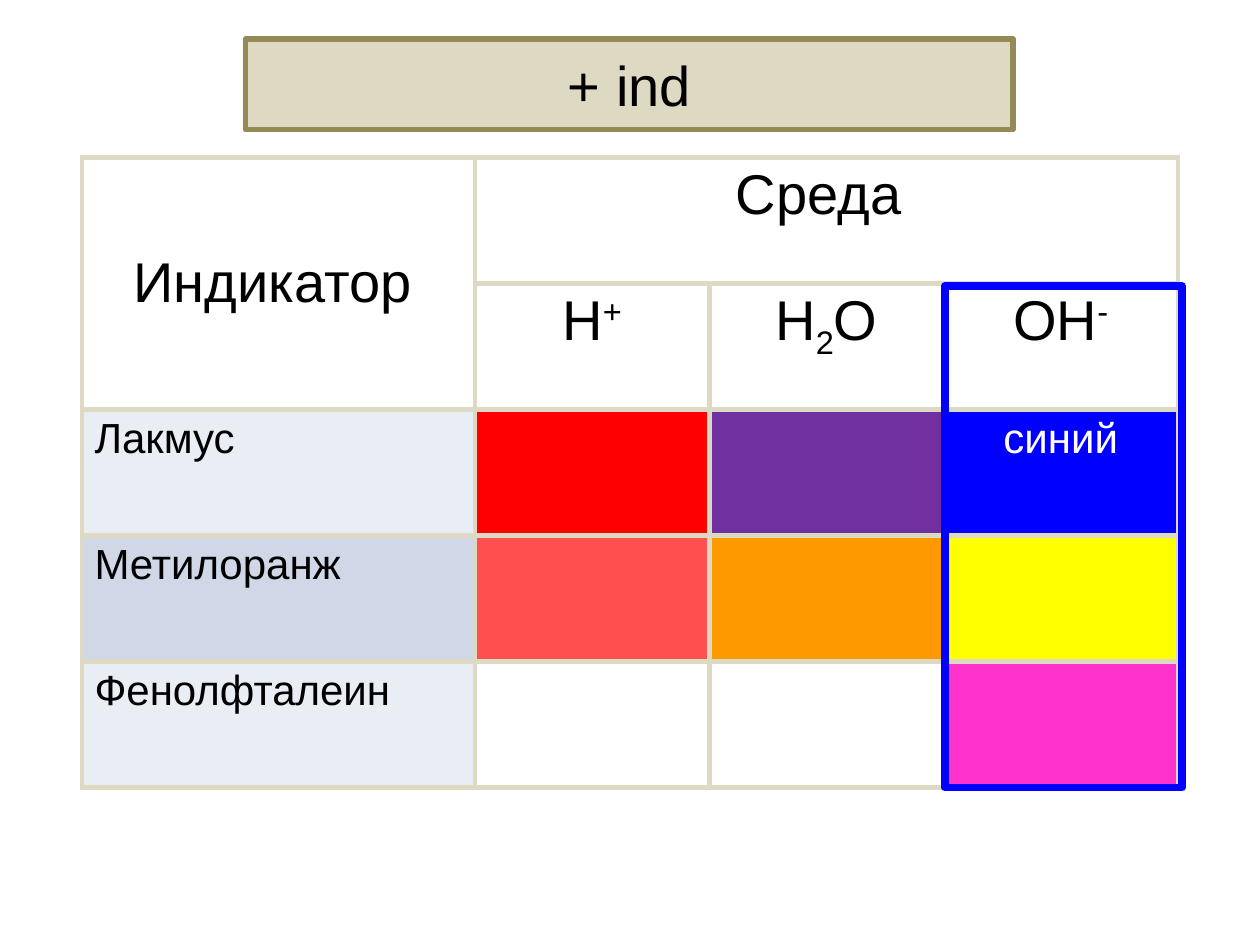
from dataclasses import dataclass

from lxml import etree
from pptx import Presentation
from pptx import util as u
from pptx.dml.color import RGBColor
from pptx.enum import shapes, text
from pptx.oxml.ns import qn


@dataclass(frozen=True)
class Theme:
    font: str = "Arial"
    heading: int = 32
    body: int = 24
    ink: str = "000000"
    light: str = "FFFFFF"
    sand: str = "DDD9C3"
    olive: str = "948A54"
    band_pale: str = "E9EDF4"
    band_dark: str = "D0D8E8"
    alkali: str = "0000FF"
    rule: float = 3
    frame: float = 4.5


@dataclass(frozen=True)
class Run:
    text: str
    baseline: int = 0  # percent above or below the line
    size: int | None = None


@dataclass(frozen=True)
class Box:
    left: float
    top: float
    width: float
    height: float

    def lengths(self) -> list[u.Length]:
        return [u.Pt(v) for v in (self.left, self.top, self.width, self.height)]


@dataclass(frozen=True)
class Entry:
    row: int
    col: int
    runs: tuple[Run, ...] = ()
    size: int = 24
    color: str = "000000"
    fill: str | None = None
    centered: bool = True
    middle: bool = False


@dataclass(frozen=True)
class Indicator:
    name: str
    band: str
    colors: tuple[str | None, ...]  # acid, water, alkali
    alkali_label: str = ""


THEME = Theme()
TITLE_BOX = Box(140.4, 22.3, 438.5, 51.8)
TABLE_BOX = Box(46.8, 90, 626.4, 360)
FRAME_BOX = Box(540, 163.4, 135.4, 286.6)
NAME_WIDTH = 224.6
ROWS, COLS = 5, 4

MEDIA = (
    (Run("H"), Run("+", 30)),
    (Run("H"), Run("2", -25), Run("O")),
    (Run("OH"), Run("-", 30)),
)
INDICATORS = (
    Indicator("Лакмус", THEME.band_pale, ("FF0000", "7030A0", THEME.alkali), "синий"),
    Indicator("Метилоранж", THEME.band_dark, ("FF5050", "FF9900", "FFFF00")),
    Indicator("Фенолфталеин", THEME.band_pale, (None, None, "FF33CC")),
)


def write(paragraph, runs: tuple[Run, ...], size: int, color: str, centered: bool = True) -> None:
    paragraph.alignment = text.PP_ALIGN.CENTER if centered else text.PP_ALIGN.LEFT
    paragraph.font.name = THEME.font
    paragraph.font.size = u.Pt(size)
    paragraph.font.color.rgb = RGBColor.from_string(color)
    for part in runs:
        run = paragraph.add_run()
        run.text = part.text
        if part.size:
            run.font.size = u.Pt(part.size)
        if part.baseline:
            run._r.get_or_add_rPr().set("baseline", str(part.baseline * 1000))


def draw_box(slide, kind, box: Box, fill: str | None, line: str, width: float):
    shape = slide.shapes.add_shape(kind, *box.lengths())
    shape.shadow.inherit = False
    if fill:
        shape.fill.solid()
        shape.fill.fore_color.rgb = RGBColor.from_string(fill)
    else:
        shape.fill.background()
    shape.line.color.rgb = RGBColor.from_string(line)
    shape.line.width = u.Pt(width)
    return shape


def add_borders(cell) -> None:
    properties = cell._tc.get_or_add_tcPr()
    for side in ("lnL", "lnR", "lnT", "lnB"):
        border = etree.SubElement(properties, qn(f"a:{side}"), w=str(u.Pt(THEME.rule)))
        solid = etree.SubElement(border, qn("a:solidFill"))
        etree.SubElement(solid, qn("a:srgbClr"), val=THEME.sand)


def fill_cell(cell, entry: Entry) -> None:
    if entry.fill:
        cell.fill.solid()
        cell.fill.fore_color.rgb = RGBColor.from_string(entry.fill)
    if entry.middle:
        cell.vertical_anchor = text.MSO_ANCHOR.MIDDLE
    write(cell.text_frame.paragraphs[0], entry.runs, entry.size, entry.color, entry.centered)


def table_entries() -> list[Entry]:
    # Headings
    entries = [
        Entry(0, 0, (Run("Индикатор"), Run(" ", size=THEME.body)), THEME.heading, middle=True),
        Entry(0, 1, (Run("Среда "),), THEME.heading),
    ]
    entries += [Entry(1, col, runs, THEME.heading) for col, runs in enumerate(MEDIA, 1)]
    # Indicators and their colours
    for row, indicator in enumerate(INDICATORS, 2):
        entries.append(Entry(row, 0, (Run(indicator.name),), THEME.body, THEME.ink,
                             indicator.band, centered=False))
        for col, color in enumerate(indicator.colors, 1):
            label = indicator.alkali_label if col == COLS - 1 else ""
            runs = (Run(label),) if label else ()
            entries.append(Entry(row, col, runs, THEME.body, THEME.light, color))
    return entries


def draw_table(slide) -> None:
    table = slide.shapes.add_table(ROWS, COLS, *TABLE_BOX.lengths()).table
    table.first_row = table.horz_banding = False
    medium_width = (TABLE_BOX.width - NAME_WIDTH) / (COLS - 1)
    for col, column in enumerate(table.columns):
        column.width = u.Pt(medium_width if col else NAME_WIDTH)
    for row in table.rows:
        row.height = u.Pt(TABLE_BOX.height / ROWS)
    for cell in table.iter_cells():
        add_borders(cell)
        cell.fill.background()
    table.cell(0, 0).merge(table.cell(1, 0))
    table.cell(0, 1).merge(table.cell(0, COLS - 1))
    for entry in table_entries():
        fill_cell(table.cell(entry.row, entry.col), entry)


def main() -> None:
    deck = Presentation()
    deck.slide_width, deck.slide_height = u.Pt(720), u.Pt(540)
    slide = deck.slides.add_slide(deck.slide_layouts[6])

    # Title
    title = draw_box(slide, shapes.MSO_SHAPE.ROUNDED_RECTANGLE, TITLE_BOX,
                     THEME.sand, THEME.olive, THEME.rule)
    title.adjustments[0] = 0
    title.text_frame.vertical_anchor = text.MSO_ANCHOR.MIDDLE
    write(title.text_frame.paragraphs[0], (Run("+ ind"),), THEME.heading, THEME.ink)

    # Indicator table
    draw_table(slide)

    # Frame around the alkaline column
    draw_box(slide, shapes.MSO_SHAPE.RECTANGLE, FRAME_BOX, None, THEME.alkali, THEME.frame)

    deck.save("out.pptx")


if __name__ == "__main__":
    main()
